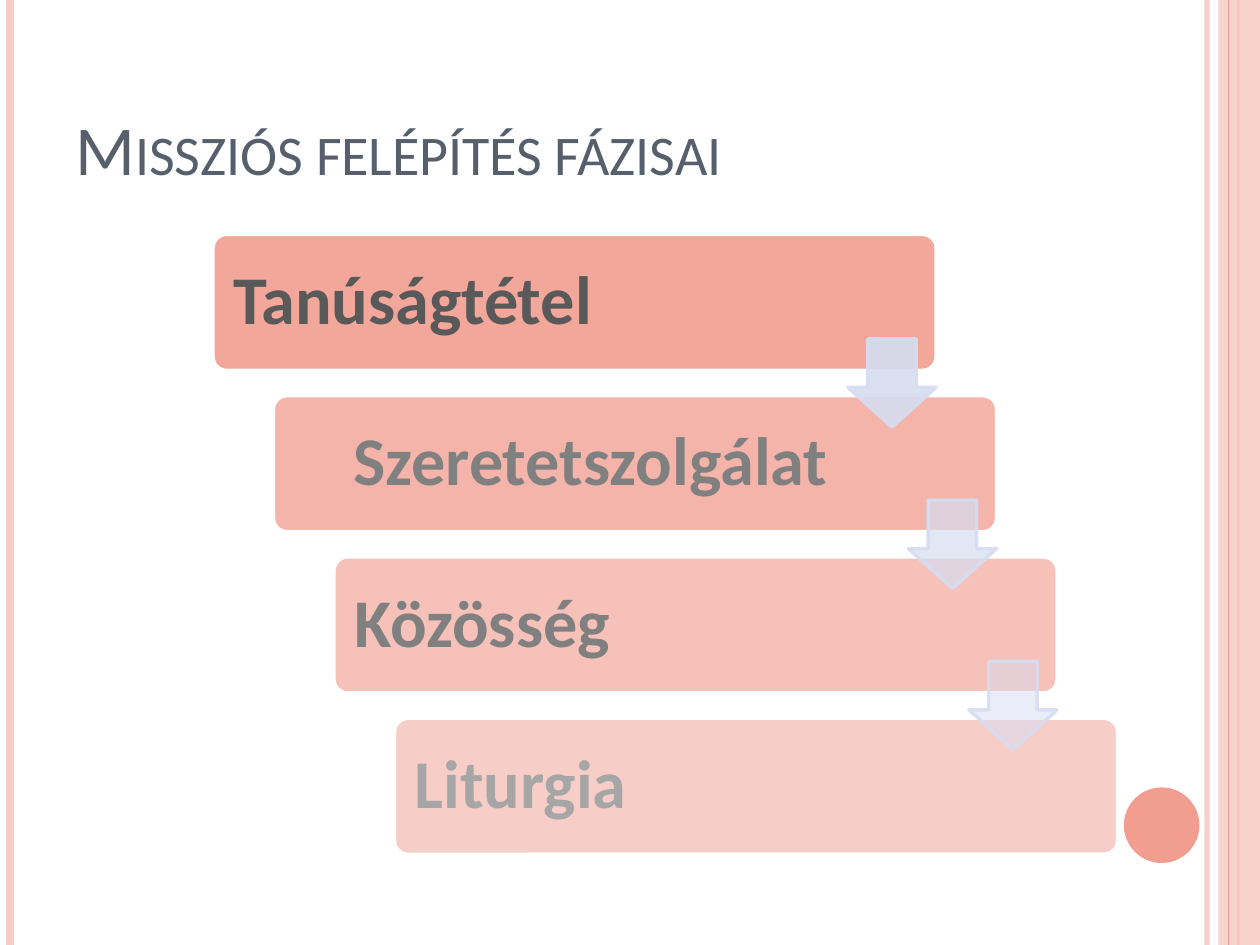
from lxml import etree
from pptx import Presentation
from pptx.dml.color import RGBColor
from pptx.enum.shapes import MSO_CONNECTOR, MSO_SHAPE
from pptx.enum.text import MSO_ANCHOR, PP_ALIGN
from pptx.oxml.ns import qn
from pptx.util import Inches, Pt

LINE = MSO_CONNECTOR.STRAIGHT
RECT, OVAL = MSO_SHAPE.RECTANGLE, MSO_SHAPE.OVAL
ROUND, ARROW = MSO_SHAPE.ROUNDED_RECTANGLE, MSO_SHAPE.DOWN_ARROW
LEFT, RIGHT = PP_ALIGN.LEFT, PP_ALIGN.RIGHT
MIDDLE, BOTTOM = MSO_ANCHOR.MIDDLE, MSO_ANCHOR.BOTTOM

COLORS = {
    "pale": "F7CCC6", "coral": "F19E90", "ice": "D6DDF1", "white": "FFFFFF",
    "slate": "575F6D", "dark": "595959", "mid": "808080", "light": "A6A6A6",
}
STEPS = [
    ("Tanúságtétel", "dark", LEFT, 90),
    ("Szeretetszolgálat", "mid", RIGHT, 77),
    ("Közösség", "mid", LEFT, 63),
    ("Liturgia", "light", LEFT, 50),
]
FADES = [90, 70, 50]


def cut(box, x, y, w, h):
    """Return the part of a box given in percent of its size."""
    left, top, wide, high = box
    return (int(left + wide * x / 100), int(top + high * y / 100),
            int(wide * w / 100), int(high * h / 100))


def tint(fill, color, alpha=100):
    """Apply a solid colour with an opacity in percent."""
    fill.solid()
    fill.fore_color.rgb = RGBColor.from_string(COLORS[color])
    if alpha < 100:
        node = fill._xPr.find(".//" + qn("a:srgbClr"))
        etree.SubElement(node, qn("a:alpha"), val=str(alpha * 1000))


def add_form(slide, kind, box, color, alpha=100, edge=None, fade=100, adjs=()):
    """Add a preset shape with a fill and an optional outline."""
    form = slide.shapes.add_shape(kind, *box)
    form.shadow.inherit = False
    tint(form.fill, color, alpha)
    if edge:
        tint(form.line.fill, edge, fade)
        form.line.width = Pt(2)
    else:
        form.line.fill.background()
    for i, adj in enumerate(adjs):
        form.adjustments[i] = adj


def add_rule(slide, box, x, color, width, alpha=100):
    """Add a line down the full height of a box."""
    left, top, _, high = cut(box, x, 0, 0, 100)
    rule = slide.shapes.add_connector(LINE, left, top, left, top + high)
    tint(rule.line.fill, color, alpha)
    rule.line.width = Pt(width)
    etree.SubElement(rule._element.spPr, qn("a:effectLst"))


def add_text(slide, box, text, color, size, pads, anchor, align=LEFT, **font):
    """Add a text box with one formatted run."""
    frame = slide.shapes.add_textbox(*box).text_frame
    look = {"word_wrap": True, "vertical_anchor": anchor,
            "margin_left": Inches(pads[0]), "margin_right": Inches(pads[0]),
            "margin_top": Inches(pads[1]), "margin_bottom": Inches(pads[1])}
    for key, val in look.items():
        setattr(frame, key, val)
    para = frame.paragraphs[0]
    para.alignment = align
    run = para.add_run()
    run.text = text
    for key, val in {"name": "Calibri", "size": Pt(size), **font}.items():
        setattr(run.font, key, val)
    run.font.color.rgb = RGBColor.from_string(COLORS[color])
    return para


def draw_frame(slide, box):
    """Draw the side stripes and the disc."""
    add_rule(slide, box, 95.8, "pale", 3, 93)
    add_rule(slide, box, 0.8, "pale", 4.5)
    add_rule(slide, box, 98.3, "coral", 1.5)
    add_form(slide, RECT, cut(box, 96.7, 0, 3.3, 100), "pale", 87)
    add_rule(slide, box, 97.5, "coral", 0.75)
    add_form(slide, OVAL, cut(box, 89.2, 83.33, 6, 8), "coral")


def draw_title(slide, box):
    """Write the title in small capitals."""
    para = add_text(slide, box, "Missziós felépítés fázisai", "slate", 40,
                    (0.1, 0.05), BOTTOM)
    para.runs[0].font._element.set("cap", "small")


def draw_steps(slide, box):
    """Draw the descending bars and the arrows between them."""
    wide, high = 79.94, 21.95
    right, down = (100 - wide) / (len(STEPS) - 1), (100 - high) / (len(STEPS) - 1)
    for i, (text, color, align, alpha) in enumerate(STEPS):
        x, y = i * right, i * down
        add_form(slide, ROUND, cut(box, x, y, wide, high), "coral", alpha,
                 "white", adjs=[0.1])
        para = add_text(slide, cut(box, x, y, 63.5, high), text, color, 39,
                        (0.16, 0.16), MIDDLE, align, bold=True)
        para.line_spacing = 0.9
    for i, fade in enumerate(FADES):
        spot = cut(box, 70.19 + i * right, 16.87 + i * down, 9.75, 14.23)
        add_form(slide, ARROW, spot, "ice", fade, "ice", 90, [0.55, 0.45])


def main():
    """Build the slide and save it."""
    deck = Presentation()
    deck.slide_width, deck.slide_height = Inches(10), Inches(7.5)
    slide = deck.slides.add_slide(deck.slide_layouts[6])
    page = (0, 0, deck.slide_width, deck.slide_height)
    draw_frame(slide, page)
    draw_title(slide, cut(page, 5, 4, 81.7, 16.67))
    draw_steps(slide, cut(page, 16.9, 24.8, 71.8, 65.6))
    deck.save("out.pptx")


if __name__ == "__main__":
    main()
